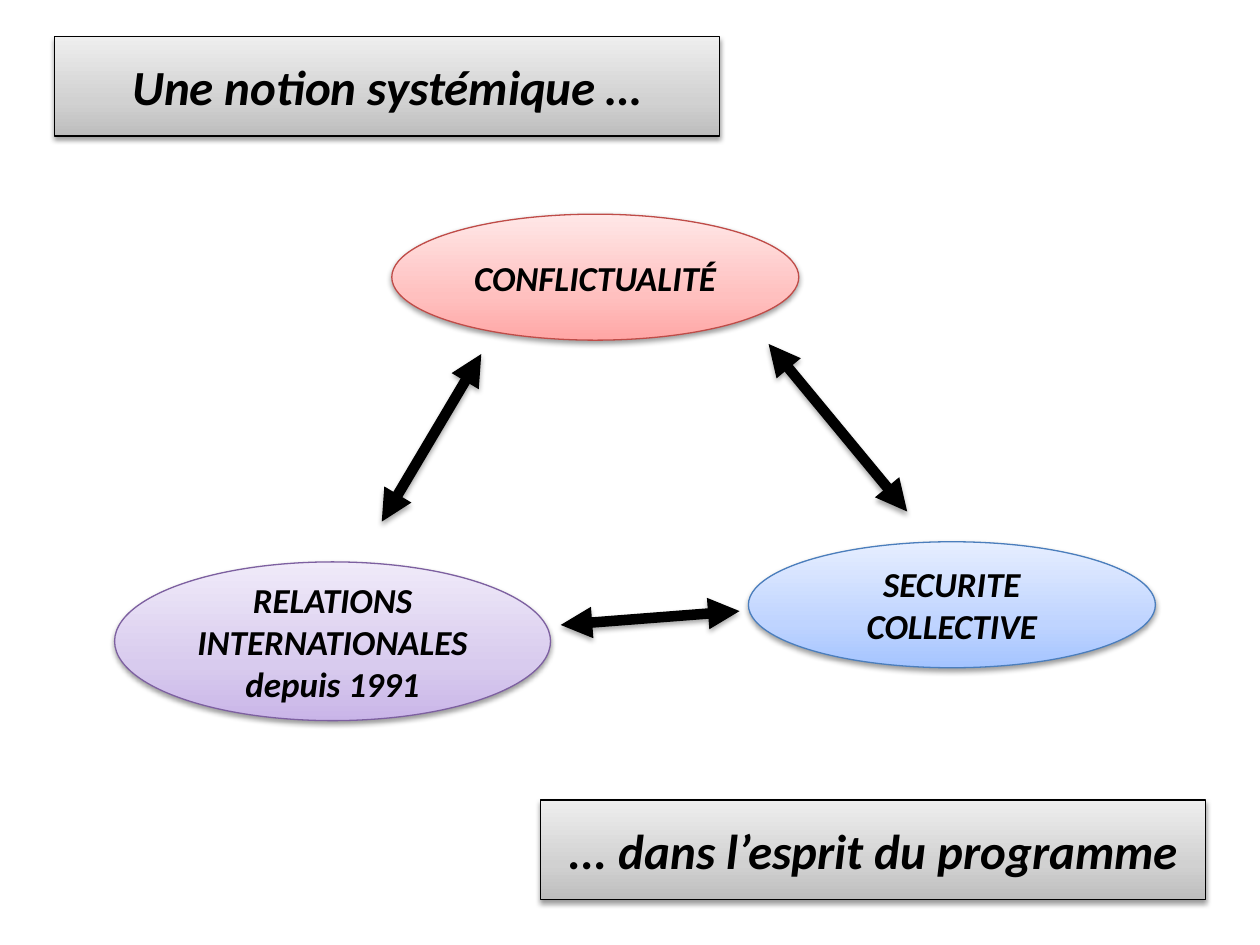
from copy import deepcopy

from lxml.etree import SubElement
from pptx import Presentation
from pptx.dml.color import RGBColor
from pptx.enum.shapes import MSO_CONNECTOR as LINK, MSO_SHAPE as SHAPE
from pptx.enum.text import MSO_ANCHOR as ANCHOR, PP_ALIGN as ALIGN
from pptx.oxml.ns import qn
from pptx.util import Inches, Pt


def rgb(code):
    return RGBColor.from_string(code)


class Deck:
    """Holds the shared style and the slide being drawn."""

    font = "Calibri"
    ink = "000000"

    def __init__(self):
        self.prs = Presentation()
        self.prs.slide_width, self.prs.slide_height = Inches(10), Inches(7.5)
        self.slide = self.prs.slides.add_slide(self.prs.slide_layouts[6])

    def shade(self, props, alpha, dist):
        effects = props.find(qn("a:effectLst"))
        if effects is None:
            effects = SubElement(props, qn("a:effectLst"))
        outer = SubElement(effects, qn("a:outerShdw"), blurRad=str(Pt(3.1)),
                           dist=str(Pt(dist)), dir="5400000", rotWithShape="0")
        tone = SubElement(outer, qn("a:srgbClr"), val=self.ink)
        SubElement(tone, qn("a:alpha"), val=str(alpha * 1000))

    def blend(self, shape, tones):
        fill = shape.fill
        fill.gradient()
        fill.gradient_angle = 90
        first = shape.element.spPr.find(".//" + qn("a:gs"))
        first.addnext(deepcopy(first))
        for stop, place, tone in zip(fill.gradient_stops, (0, 0.35, 1), tones):
            stop.position = place
            stop.color.rgb = rgb(tone)

    def block(self, kind, box, text, size, tones, edge):
        shape = self.slide.shapes.add_shape(kind, *map(Inches, box))
        self.blend(shape, tones)
        shape.line.color.rgb = rgb(edge)
        shape.line.width = Pt(0.75)
        shape.shadow.inherit = False
        self.shade(shape.element.spPr, 38, 1.6)
        frame = shape.text_frame
        frame.word_wrap = True
        frame.vertical_anchor = ANCHOR.MIDDLE
        para = frame.paragraphs[0]
        para.alignment = ALIGN.CENTER
        run = para.add_run()
        run.text = text
        font = run.font
        font.name, font.size = self.font, Pt(size)
        font.bold = font.italic = True
        font.color.rgb = rgb(self.ink)

    def oval(self, box, text, tones, edge):
        self.block(SHAPE.OVAL, box, text, 20, tones, edge)

    def banner(self, left, top, text):
        greys = ("BDBDBD", "D1D1D1", "EEEEEE")
        self.block(SHAPE.RECTANGLE, (left, top, 5.28, 0.79), text, 28, greys, self.ink)

    def arrow(self, start, end):
        link = self.slide.shapes.add_connector(LINK.STRAIGHT, *map(Inches, start + end))
        link.line.color.rgb = rgb(self.ink)
        link.line.width = Pt(6)
        props = link.element.spPr
        for tip in ("a:headEnd", "a:tailEnd"):
            SubElement(props.find(qn("a:ln")), qn(tip), type="triangle")
        self.shade(props, 35, 1.8)

    def save(self):
        self.prs.save("out.pptx")


def main():
    deck = Deck()
    deck.oval((3.11, 1.7, 3.23, 1), "CONFLICTUALITÉ",
              ("FFA6A5", "FFC0BF", "FFE7E7"), "BF4C48")
    deck.oval((5.94, 4.3, 3.23, 1), "SECURITE COLLECTIVE",
              ("A4C4FF", "BFD4FF", "E6EEFF"), "4B7EBC")
    deck.oval((0.91, 4.46, 3.46, 1.26), "RELATIONS INTERNATIONALES depuis 1991",
              ("C9B5E8", "D8CBEE", "F0EAF9"), "7D60A0")
    deck.arrow((3.03, 4.14), (3.82, 2.81))
    deck.arrow((7.2, 4.06), (6.1, 2.73))
    deck.arrow((5.87, 4.85), (4.45, 4.96))
    deck.banner(0.43, 0.29, "Une notion systémique …")
    deck.banner(4.29, 6.35, "... dans l’esprit du programme")
    deck.save()


if __name__ == "__main__":
    main()
